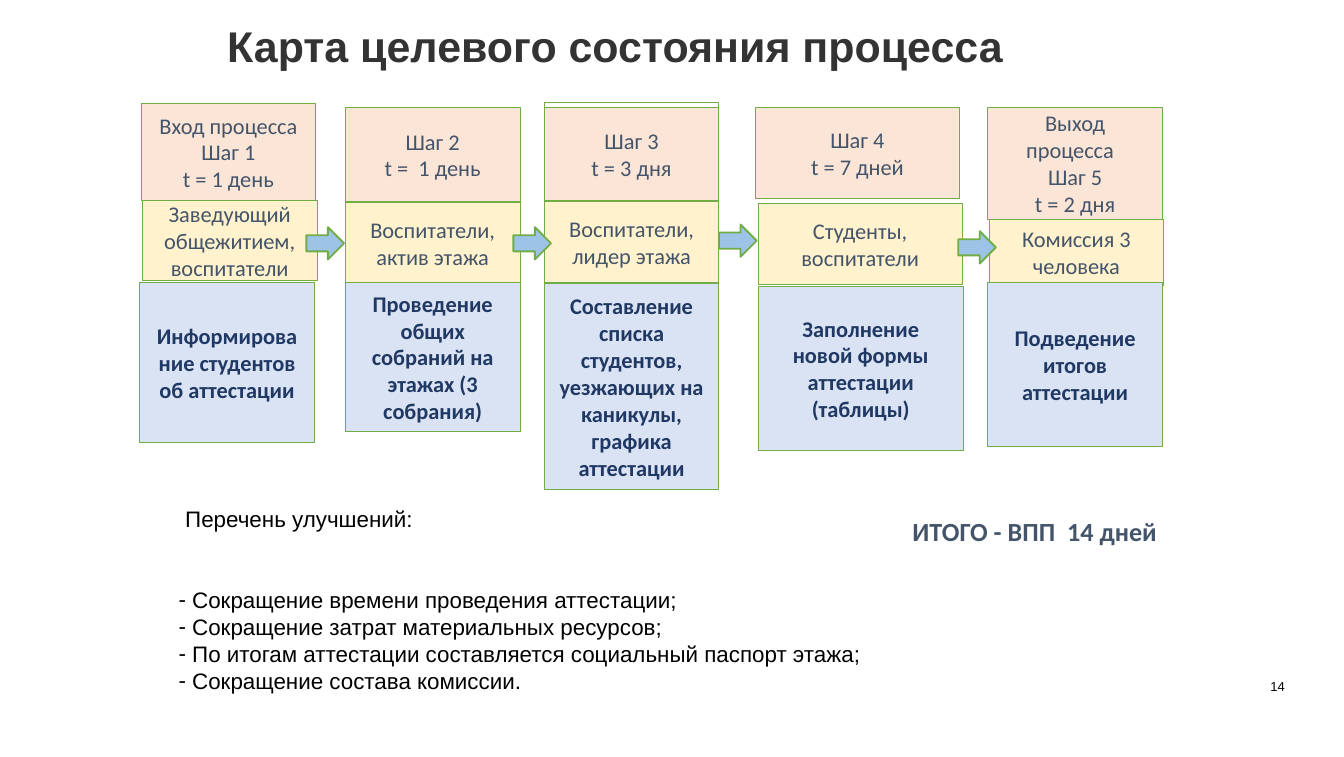
from lxml import etree
from pptx import Presentation
from pptx.dml.color import RGBColor
from pptx.enum.shapes import MSO_SHAPE
from pptx.enum.text import MSO_ANCHOR, MSO_AUTO_SIZE, PP_ALIGN
from pptx.oxml.ns import qn
from pptx.util import Inches, Pt

RECTANGLE, ARROW = MSO_SHAPE.RECTANGLE, MSO_SHAPE.RIGHT_ARROW
TOP, MIDDLE, BOTTOM = MSO_ANCHOR.TOP, MSO_ANCHOR.MIDDLE, MSO_ANCHOR.BOTTOM
LEFT, CENTER, RIGHT = PP_ALIGN.LEFT, PP_ALIGN.CENTER, PP_ALIGN.RIGHT
NO_AUTOFIT = MSO_AUTO_SIZE.NONE

BLACK = RGBColor(0x00, 0x00, 0x00)
CHARCOAL = RGBColor(0x33, 0x33, 0x33)
SLATE = RGBColor(0x44, 0x54, 0x6A)
NAVY = RGBColor(0x20, 0x38, 0x64)
GREEN = RGBColor(0x70, 0xAD, 0x47)
PEACH = RGBColor(0xFB, 0xE5, 0xD6)
CREAM = RGBColor(0xFF, 0xF2, 0xCC)
PALE_BLUE = RGBColor(0xDA, 0xE3, 0xF3)
SKY = RGBColor(0x9D, 0xC3, 0xE6)

ROW_STYLES = [(PEACH, SLATE, False), (CREAM, SLATE, False), (PALE_BLUE, NAVY, True)]

STEPS = [
    [((1.05, 0.77, 1.3, 0.72), "Вход процесса Шаг 1\nt = 1 день"),
     ((1.06, 1.49, 1.3, 0.6), "Заведующий общежитием, воспитатели"),
     ((1.04, 2.1, 1.3, 1.19), "Информирование студентов об аттестации")],
    [((2.57, 0.8, 1.3, 0.7), "Шаг 2\nt =  1 день"),
     ((2.57, 1.51, 1.3, 0.6), "Воспитатели, актив этажа"),
     ((2.57, 2.1, 1.3, 1.11), "Проведение общих собраний на этажах (3 собрания)")],
    [((4.05, 0.8, 1.3, 0.69), "Шаг 3\nt = 3 дня"),
     ((4.05, 1.5, 1.3, 0.6), "Воспитатели, лидер этажа"),
     ((4.05, 2.11, 1.3, 1.53),
      "Составление списка студентов, уезжающих на каникулы, графика аттестации")],
    [((5.62, 0.8, 1.52, 0.68), "Шаг 4\nt = 7 дней"),
     ((5.64, 1.51, 1.52, 0.61), "Студенты, воспитатели"),
     ((5.64, 2.13, 1.53, 1.22), "Заполнение новой формы аттестации (таблицы)")],
    [((7.35, 0.8, 1.3, 0.83), "Выход процесса  \nШаг 5\nt = 2 дня"),
     ((7.36, 1.63, 1.3, 0.49), "Комиссия 3 человека"),
     ((7.35, 2.1, 1.3, 1.22), "Подведение итогов аттестации")],
]
STEP_FRAME = (4.05, 0.76, 1.3, 2.51)
ARROW_POSITIONS = [(2.28, 1.69), (3.82, 1.69), (5.35, 1.67), (7.13, 1.72)]
IMPROVEMENTS = [
    "Сокращение времени проведения аттестации;",
    "Сокращение затрат материальных ресурсов;",
    "По итогам аттестации составляется социальный паспорт этажа;",
    "Сокращение состава комиссии.",
]


def place(shape, box):
    """Move and size a shape to a box given in inches."""
    shape.left, shape.top, shape.width, shape.height = map(Inches, box)


def write_text(shape, text, size, font_name, color, bold=False, align=LEFT, anchor=TOP):
    """Fill a shape with text in one style."""
    text_frame = shape.text_frame
    text_frame.text = text
    text_frame.word_wrap = True
    text_frame.auto_size = NO_AUTOFIT
    text_frame.vertical_anchor = anchor
    for paragraph in text_frame.paragraphs:
        paragraph.alignment = align
        for run in paragraph.runs:
            run.font.size = Pt(size)
            run.font.name = font_name
            run.font.bold = bold
            run.font.color.rgb = color


def clear_margins(text_frame):
    """Remove the inner margins of a text frame."""
    text_frame.margin_left = text_frame.margin_right = 0
    text_frame.margin_top = text_frame.margin_bottom = 0


def add_outlined(slide, kind, box, fill=None, line_width=0.5):
    """Add a green-outlined shape with an optional fill."""
    shape = slide.shapes.add_shape(kind, *map(Inches, box))
    shape.shadow.inherit = False
    if fill is None:
        shape.fill.background()
    else:
        shape.fill.solid()
        shape.fill.fore_color.rgb = fill
    shape.line.color.rgb = GREEN
    shape.line.width = Pt(line_width)
    return shape


def add_label(slide, box, text, size, font_name, color, **style):
    """Add a text box with one style."""
    label = slide.shapes.add_textbox(*map(Inches, box))
    write_text(label, text, size, font_name, color, **style)
    return label


def add_title(slide, box):
    """Place and format the slide title."""
    title = slide.shapes.title
    place(title, box)
    write_text(title, "Карта целевого состояния процесса", 23, "Arial", CHARCOAL, bold=True)
    clear_margins(title.text_frame)
    title.text_frame.paragraphs[0].line_spacing = 0.9


def add_step(slide, cells):
    """Add one process step: time, people and action."""
    for (box, text), (fill, color, bold) in zip(cells, ROW_STYLES):
        cell = add_outlined(slide, RECTANGLE, box, fill)
        write_text(cell, text, 12, "Calibri", color, bold, CENTER, MIDDLE)


def add_process_map(slide):
    """Add the five steps and the arrows between them."""
    add_outlined(slide, RECTANGLE, STEP_FRAME)
    for cells in STEPS:
        add_step(slide, cells)
    for left, top in ARROW_POSITIONS:
        add_outlined(slide, ARROW, (left, top, 0.28, 0.24), SKY, 1)


def add_improvements(slide, box):
    """Place the dashed list of improvements in the body placeholder."""
    body = slide.placeholders[1]
    place(body, box)
    write_text(body, "\n".join(IMPROVEMENTS), 12, "Arial", BLACK)
    for paragraph in body.text_frame.paragraphs:
        paragraph.space_before = Pt(0)
        properties = paragraph._p.get_or_add_pPr()
        properties.set("marL", str(Inches(0.1)))
        properties.set("indent", str(-Inches(0.1)))
        etree.SubElement(properties, qn("a:buChar")).set("char", "-")


def main():
    """Build and save the presentation."""
    presentation = Presentation()
    presentation.slide_width = Inches(10)
    presentation.slide_height = Inches(5.63)
    slide = presentation.slides.add_slide(presentation.slide_layouts[1])
    add_title(slide, (1.69, 0.19, 6.17, 0.5))
    total = add_label(slide, (6.53, 3.83, 2.34, 0.24), "ИТОГО - ВПП  14 дней",
                      14, "Calibri", SLATE, bold=True, align=CENTER)
    clear_margins(total.text_frame)
    add_label(slide, (1.28, 3.71, 2.8, 0.3), "Перечень улучшений:", 12, "Arial", BLACK)
    add_improvements(slide, (1.23, 4.31, 6.62, 0.91))
    add_process_map(slide)
    number = add_label(slide, (8.95, 5.01, 0.61, 0.15), "14", 7, "Arial", BLACK,
                       align=RIGHT, anchor=BOTTOM)
    clear_margins(number.text_frame)
    presentation.save("out.pptx")


if __name__ == "__main__":
    main()
